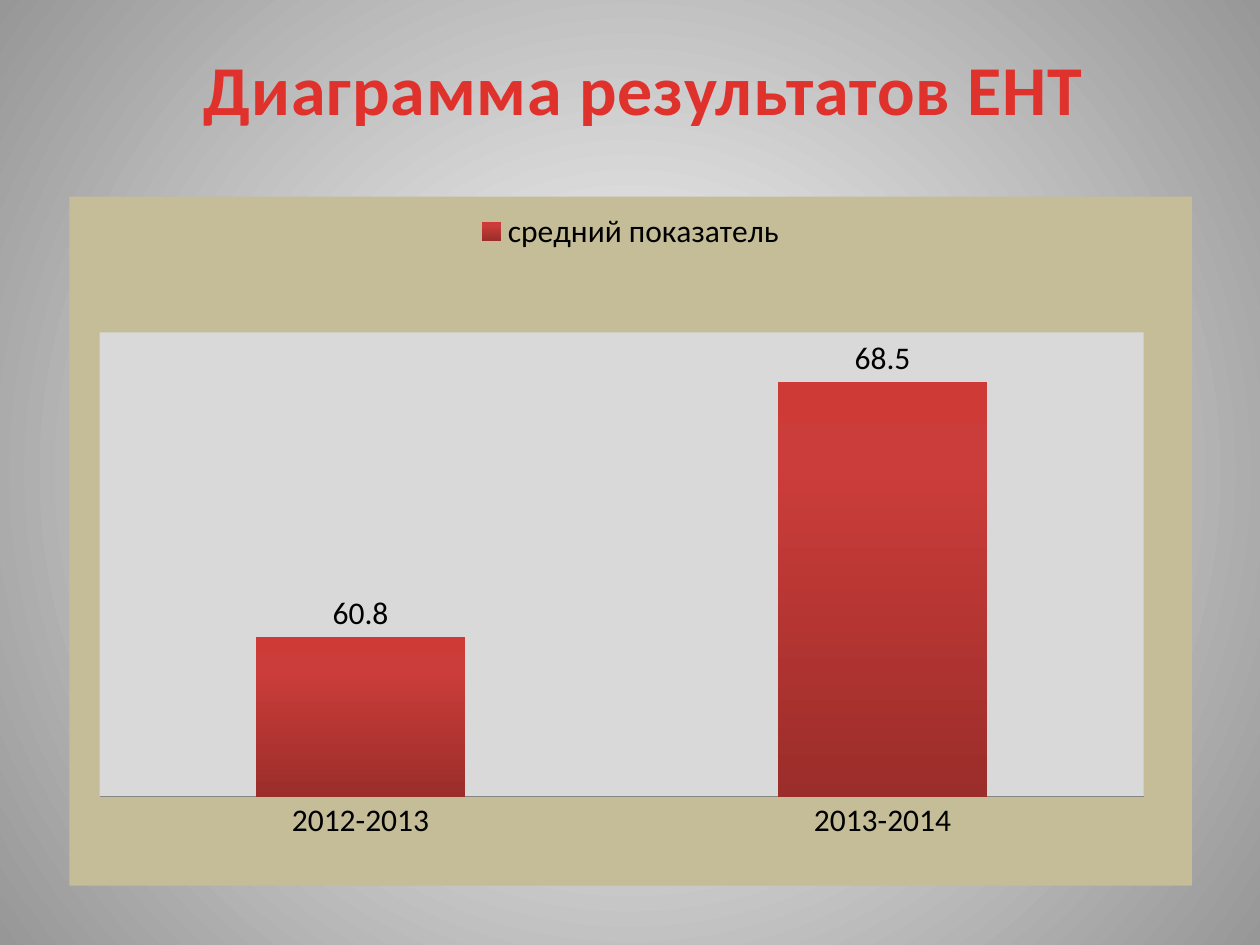
from lxml import etree
from pptx import Presentation
from pptx.chart.data import CategoryChartData
from pptx.dml.color import RGBColor
from pptx.enum.chart import XL_CHART_TYPE, XL_LABEL_POSITION, XL_LEGEND_POSITION, XL_TICK_MARK
from pptx.enum.text import MSO_AUTO_SIZE, PP_ALIGN
from pptx.oxml import parse_xml
from pptx.oxml.ns import nsdecls, qn
from pptx.util import Inches, Pt

COLUMN = XL_CHART_TYPE.COLUMN_CLUSTERED
OUTSIDE = XL_LABEL_POSITION.OUTSIDE_END
TOP = XL_LEGEND_POSITION.TOP
NO_TICK = XL_TICK_MARK.NONE
CENTER = PP_ALIGN.CENTER
FONT = "Calibri"


def color(value):
    return RGBColor.from_string(value)


def set_gradient(parent, stops, direction):
    """Replace the solid fill in parent with a gradient."""
    gs = "".join(f'<a:gs pos="{pos * 1000}"><a:srgbClr val="{c}"/></a:gs>' for pos, c in stops)
    fill = parse_xml(f'<a:gradFill {nsdecls("a")} rotWithShape="1">'
                     f'<a:gsLst>{gs}</a:gsLst>{direction}</a:gradFill>')
    parent.replace(parent.find(qn("a:solidFill")), fill)


prs = Presentation()
prs.slide_width, prs.slide_height = Inches(10), Inches(7.5)
s = prs.slides.add_slide(prs.slide_layouts[6])

# Background
s.background.fill.solid()
set_gradient(s.element.find(".//" + qn("p:bgPr")), [(0, "FFFFFF"), (100, "979797")],
             '<a:path path="circle"><a:fillToRect l="50000" t="50000" r="50000" b="50000"/></a:path>')

# Column chart
data = CategoryChartData(number_format="0.0")
data.categories = ["2012-2013", "2013-2014"]
data.add_series("средний показатель", [60.8, 68.5])
chart = s.shapes.add_chart(COLUMN, Inches(0.55), Inches(1.56), Inches(8.91), Inches(5.47), data).chart
chart.has_title = False
chart.font.name, chart.font.size = FONT, Pt(18)
chart.font.color.rgb = color("000000")
chart.has_legend = True
chart.legend.position = TOP
chart.legend.include_in_layout = False

# Axes
cat_axis, val_axis = chart.category_axis, chart.value_axis
cat_axis.major_tick_mark = NO_TICK
cat_axis.format.line.color.rgb = color("868686")
for name, value in {"visible": False, "has_major_gridlines": False,
                    "minimum_scale": 56, "maximum_scale": 70}.items():
    setattr(val_axis, name, value)

# Columns and value labels
plot = chart.plots[0]
for name, value in {"gap_width": 150, "overlap": -25, "vary_by_categories": False,
                    "has_data_labels": True}.items():
    setattr(plot, name, value)
plot.data_labels.show_value = True
plot.data_labels.position = OUTSIDE
ser = plot.series[0]
ser.format.fill.solid()
set_gradient(ser._element.find(qn("c:spPr")), [(0, "9B2D2A"), (80, "CB3D3A"), (100, "CE3B37")],
             '<a:lin ang="16200000" scaled="0"/>')

# Chart and plot area fills
space = chart._chartSpace
plot_area = space.chart.plotArea
for before, fill in ((space.chart, "C4BD97"), (plot_area[-1], "D9D9D9")):
    before.addnext(parse_xml(f'<c:spPr {nsdecls("c", "a")}><a:solidFill><a:srgbClr val="{fill}"/>'
                             '</a:solidFill><a:ln><a:noFill/></a:ln></c:spPr>'))

# Inner plot position, as fractions of the chart
for old in plot_area.findall(qn("c:layout")):
    plot_area.remove(old)
layout = etree.Element(qn("c:layout"))
manual = etree.SubElement(layout, qn("c:manualLayout"))
for tag, value in {"layoutTarget": "inner", "xMode": "edge", "yMode": "edge",
                   "x": 0.027, "y": 0.197, "w": 0.93, "h": 0.674}.items():
    etree.SubElement(manual, qn("c:" + tag)).set("val", str(value))
plot_area.insert(0, layout)

# Title
tf = s.shapes.add_textbox(Inches(1.48), Inches(0.31), Inches(7.26), Inches(0.77)).text_frame
tf.word_wrap = False
tf.auto_size = MSO_AUTO_SIZE.SHAPE_TO_FIT_TEXT
p = tf.paragraphs[0]
p.alignment = CENTER
r = p.add_run()
r.text = "Диаграмма результатов ЕНТ"
for name, value in {"name": FONT, "size": Pt(40), "bold": True}.items():
    setattr(r.font, name, value)
r.font.color.rgb = color("E0322D")
rpr = r._r.get_or_add_rPr()
rpr.set("spc", "50")
set_gradient(rpr, [(25, "E0322D"), (100, "A2201C")], '<a:lin ang="5400000" scaled="0"/>')

prs.save("out.pptx")
